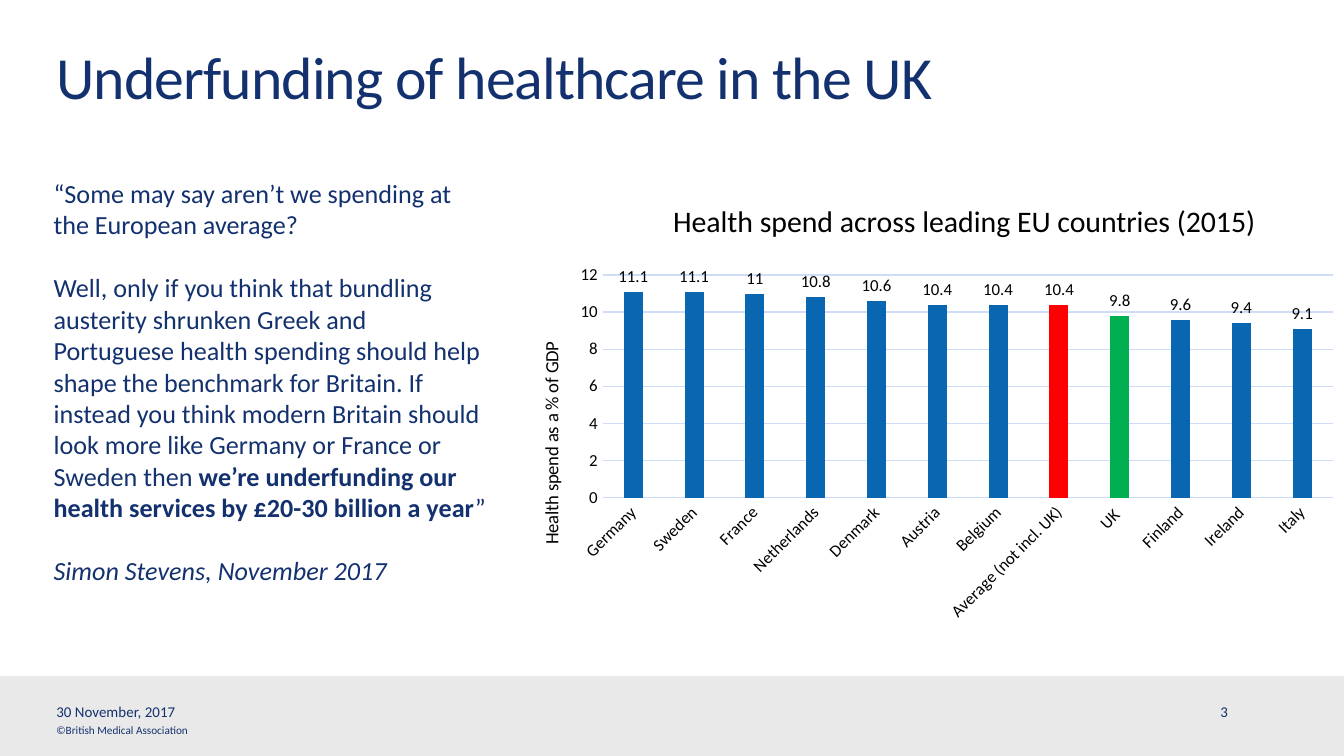
from lxml import etree
from pptx import Presentation
from pptx.chart.data import CategoryChartData
from pptx.dml.color import RGBColor
from pptx.enum import chart as ch, shapes, text
from pptx.oxml import ns
from pptx.util import Inches, Pt

COLORS = {"navy": "13316E", "black": "000000", "band": "E9E9E9", "grid": "CEDCF7",
          "bar": "0967B1", "average": "FF0000", "uk": "00B050"}
FONT = "Calibri"

TITLE = "Underfunding of healthcare in the UK"
CHART_TITLE = "Health spend across leading EU countries (2015)"
AXIS_TITLE = "Health spend as a % of GDP"
SPEND = [("Germany", 11.1), ("Sweden", 11.1), ("France", 11), ("Netherlands", 10.8),
         ("Denmark", 10.6), ("Austria", 10.4), ("Belgium", 10.4),
         ("Average (not incl. UK)", 10.4), ("UK ", 9.8), ("Finland", 9.6),
         ("Ireland", 9.4), ("Italy", 9.1)]
HIGHLIGHTS = {"Average (not incl. UK)": "average", "UK ": "uk"}
QUOTE = [
    [("“Some may say aren’t we spending at the European average?", {})],
    [("Well, only if you think that bundling austerity shrunken Greek and Portuguese "
      "health spending should help shape the benchmark for Britain. If instead you think "
      "modern Britain should look more like Germany or France or Sweden then ", {}),
     ("we’re underfunding our health services by £20-30 billion a year", {"bold": True}),
     ("”", {})],
    [("Simon Stevens, November 2017", {"italic": True})],
]
FOOTERS = [  # text, size, (left, top, width, height)
    ("30 November, 2017", 8, (0.42, 5.23, 3.17, 0.13)),
    ("©British Medical Association", 6, (0.42, 5.38, 2.07, 0.1)),
    ("3", 8, (9.08, 5.23, 0.28, 0.13)),
]


def rgb(name):
    return RGBColor.from_string(COLORS[name])


def set_font(font, size, color="black", **extra):
    for key, value in {"name": FONT, "size": Pt(size), **extra}.items():
        setattr(font, key, value)
    font.color.rgb = rgb(color)


def add_text(s, box, paragraphs, size, color="navy", gap=0, inset=True,
             anchor=text.MSO_ANCHOR.TOP):
    tf = s.shapes.add_textbox(*map(Inches, box)).text_frame
    tf.word_wrap = True
    tf.vertical_anchor = anchor
    if not inset:
        tf.margin_left = tf.margin_right = tf.margin_top = tf.margin_bottom = 0
    for i, runs in enumerate(paragraphs):
        p = tf.paragraphs[0] if i == 0 else tf.add_paragraph()
        if i:
            p.space_before = Pt(gap)
        for words, style in runs:
            r = p.add_run()
            r.text = words
            set_font(r.font, size, color, **style)
    return tf


def set_layout(parent, before, **fractions):
    """Fix the place of a chart part, as fractions of the chart."""
    for old in parent.findall(ns.qn("c:layout")):
        parent.remove(old)
    layout = etree.Element(ns.qn("c:layout"))
    manual = etree.SubElement(layout, ns.qn("c:manualLayout"))
    values = {"xMode": "edge", "yMode": "edge", **fractions}
    if "w" in fractions:
        values = {"layoutTarget": "inner", **values}
    for tag, value in values.items():
        etree.SubElement(manual, ns.qn(f"c:{tag}")).set("val", str(value))
    parent.find(ns.qn(before)).addprevious(layout)


def add_spend_chart(s):
    data = CategoryChartData()
    data.categories = [name for name, _ in SPEND]
    data.add_series("Series 1", [value for _, value in SPEND])
    chart = s.shapes.add_chart(ch.XL_CHART_TYPE.COLUMN_CLUSTERED, Inches(3.8), Inches(1.91),
                               Inches(6.24), Inches(2.76), data).chart
    chart.has_legend = chart.has_title = False
    set_font(chart.font, 10)

    plot = chart.plots[0]
    plot.gap_width, plot.overlap, plot.vary_by_categories = 219, -27, False
    plot.has_data_labels = True
    labels = plot.data_labels
    labels.show_value = True
    labels.position = ch.XL_LABEL_POSITION.OUTSIDE_END
    set_font(labels.font, 9)

    series = plot.series[0]
    series.format.fill.solid()
    series.format.fill.fore_color.rgb = rgb("bar")
    for i, (name, _) in enumerate(SPEND):
        if name in HIGHLIGHTS:
            fill = series.points[i].format.fill
            fill.solid()
            fill.fore_color.rgb = rgb(HIGHLIGHTS[name])

    cat, val = chart.category_axis, chart.value_axis
    for axis in (cat, val):
        axis.major_tick_mark = axis.minor_tick_mark = ch.XL_TICK_MARK.NONE
        set_font(axis.tick_labels.font, 9)
    cat._element.find(ns.qn("c:txPr")).find(ns.qn("a:bodyPr")).set("rot", "-2700000")
    val.minimum_scale, val.maximum_scale, val.major_unit = 0, 12, 2
    val.has_major_gridlines = True
    for line in (cat.format.line, val.major_gridlines.format.line):
        line.color.rgb = rgb("grid")
        line.width = Pt(0.75)
    val.format.line.fill.background()

    title = val.axis_title
    title.text_frame.text = AXIS_TITLE
    set_font(title.text_frame.paragraphs[0].runs[0].font, 10, bold=False)
    set_layout(title._element, "c:overlay", x=0.03, y=0.22)
    set_layout(plot._element.getparent(), "c:barChart", x=0.11, y=0.05, w=0.87, h=0.6)


def main():
    prs = Presentation()
    prs.slide_width = Inches(10)
    prs.slide_height = prs.slide_width * 9 // 16
    s = prs.slides.add_slide(prs.slide_layouts[6])

    band_top = Inches(5.03)
    band = s.shapes.add_shape(shapes.MSO_SHAPE.RECTANGLE, 0, band_top,
                              prs.slide_width, prs.slide_height - band_top)
    band.shadow.inherit = False
    band.fill.solid()
    band.fill.fore_color.rgb = rgb("band")
    band.line.fill.background()

    for words, size, box in FOOTERS:
        add_text(s, box, [[(words, {})]], size, inset=False, anchor=text.MSO_ANCHOR.MIDDLE)

    p = add_text(s, (0.42, 0.36, 7.73, 0.54), [[(TITLE, {})]], 32, inset=False).paragraphs[0]
    p.line_spacing = Pt(34)
    p.runs[0].font._element.set("spc", "-50")

    add_spend_chart(s)
    add_text(s, (4.91, 1.46, 4.67, 0.37), [[(CHART_TITLE, {})]], 16, "black")
    add_text(s, (0.3, 1.27, 3.45, 3.16), QUOTE, 14, gap=17)
    prs.save("out.pptx")


if __name__ == "__main__":
    main()
